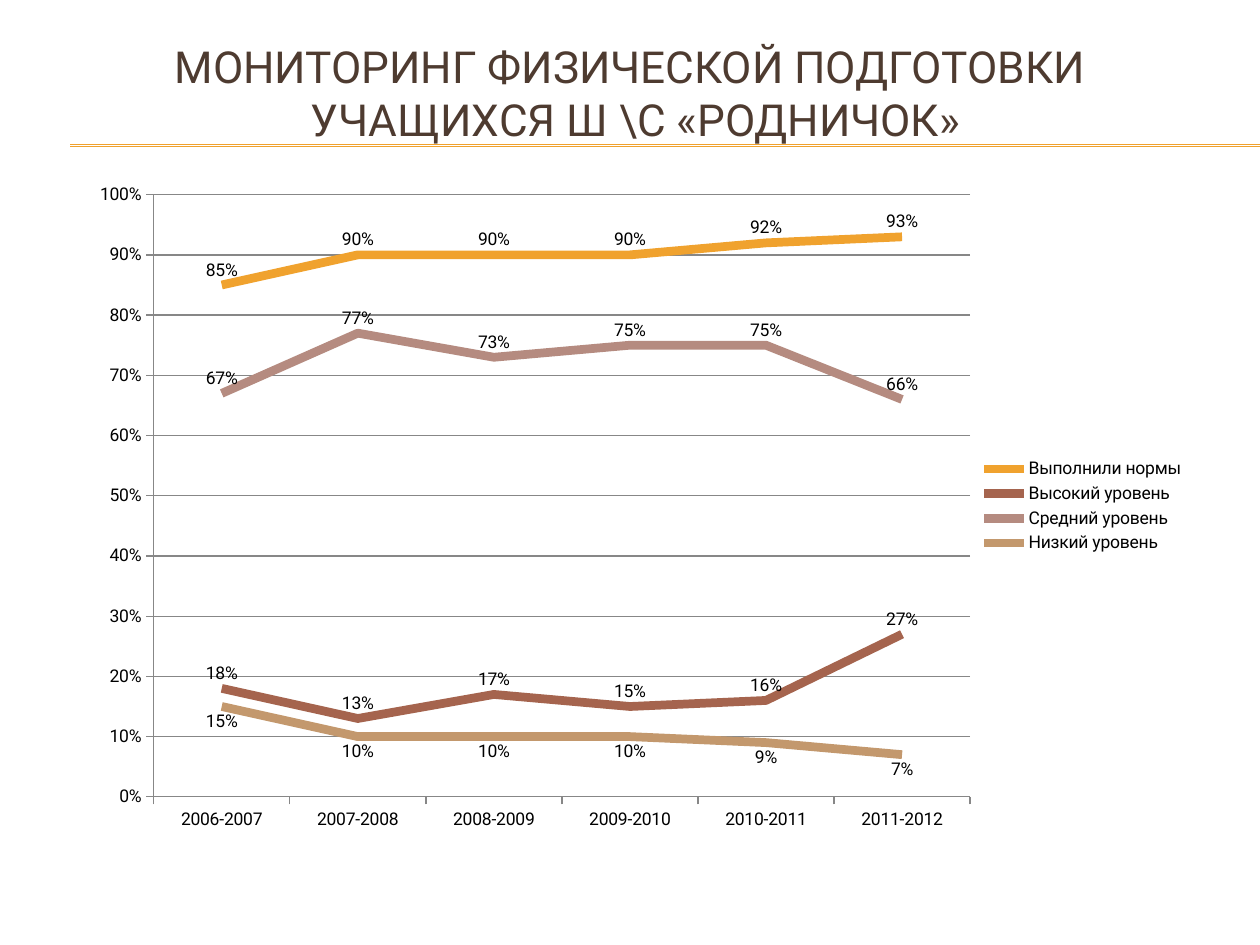
from lxml.etree import SubElement
from pptx import Presentation
from pptx.chart.data import CategoryChartData
from pptx.dml.color import RGBColor
from pptx.enum.chart import XL_CHART_TYPE, XL_LABEL_POSITION, XL_LEGEND_POSITION, XL_MARKER_STYLE, XL_TICK_MARK
from pptx.enum.shapes import MSO_CONNECTOR
from pptx.enum.text import MSO_ANCHOR, PP_ALIGN
from pptx.oxml import parse_xml
from pptx.oxml.ns import nsdecls, qn
from pptx.util import Cm, Pt

FONT = "Roboto"
BROWN = RGBColor(0x4E, 0x3B, 0x30)
ORANGE = RGBColor(0xF0, 0xA2, 0x2E)
RUST = RGBColor(0xA5, 0x64, 0x4E)
ROSE = RGBColor(0xB5, 0x8B, 0x80)
TAN = RGBColor(0xC3, 0x98, 0x6D)
GRAY = RGBColor(0x87, 0x87, 0x87)
BLACK = RGBColor(0, 0, 0)

presentation = Presentation()
presentation.slide_width = Cm(25.4)
presentation.slide_height = Cm(19.05)
slide = presentation.slides.add_slide(presentation.slide_layouts[6])


def add_text(lines, left, top, width, height, size, color):
    shape = slide.shapes.add_textbox(Cm(left), Cm(top), Cm(width), Cm(height))
    frame = shape.text_frame
    frame.word_wrap = True
    frame.vertical_anchor = MSO_ANCHOR.MIDDLE
    for index, line in enumerate(lines):
        paragraph = frame.paragraphs[0] if index == 0 else frame.add_paragraph()
        paragraph.alignment = PP_ALIGN.CENTER
        run = paragraph.add_run()
        run.text = line
        run.font.name = FONT
        run.font.size = Pt(size)
        run.font.color.rgb = color


for rule_top in (2.92, 2.95):
    rule = slide.shapes.add_connector(
        MSO_CONNECTOR.STRAIGHT, Cm(1.42), Cm(rule_top), Cm(25.4), Cm(rule_top)
    )
    rule.line.color.rgb = ORANGE
    rule.line.width = Pt(0.75)
    SubElement(rule.element.spPr, qn("a:effectLst"))

add_text(
    ["МОНИТОРИНГ ФИЗИЧЕСКОЙ ПОДГОТОВКИ", " УЧАЩИХСЯ Ш \\С «РОДНИЧОК»"],
    left=1.27, top=0.66, width=22.86, height=2.41, size=25.2, color=BROWN,
)

ABOVE, BELOW = XL_LABEL_POSITION.ABOVE, XL_LABEL_POSITION.BELOW
levels = [
    ("Выполнили нормы", (0.85, 0.9, 0.9, 0.9, 0.92, 0.93), ORANGE, ABOVE),
    ("Высокий уровень", (0.18, 0.13, 0.17, 0.15, 0.16, 0.27), RUST, ABOVE),
    ("Средний уровень", (0.67, 0.77, 0.73, 0.75, 0.75, 0.66), ROSE, ABOVE),
    ("Низкий уровень", (0.15, 0.1, 0.1, 0.1, 0.09, 0.07), TAN, BELOW),
]
chart_data = CategoryChartData(number_format="0%")
chart_data.categories = [f"{year}-{year + 1}" for year in range(2006, 2012)]
for name, values, color, position in levels:
    chart_data.add_series(name, values)

chart = slide.shapes.add_chart(
    XL_CHART_TYPE.LINE, Cm(1.27), Cm(3.38), Cm(22.86), Cm(13.64), chart_data
).chart
chart.has_title = False
chart.font.name = FONT
chart.font.size = Pt(10)
chart.font.color.rgb = BLACK
chart.has_legend = True
chart.legend.position = XL_LEGEND_POSITION.RIGHT
chart.legend.include_in_layout = False
chart.plots[0].vary_by_categories = False

for series, (name, values, color, position) in zip(chart.plots[0].series, levels):
    series.smooth = False
    series.marker.style = XL_MARKER_STYLE.NONE
    series.format.line.color.rgb = color
    series.format.line.width = Pt(5)
    labels = series.data_labels
    labels.show_value = True
    labels.position = position
    labels.number_format = "0%"
    labels.number_format_is_linked = False

for axis in (chart.category_axis, chart.value_axis):
    axis.major_tick_mark = XL_TICK_MARK.OUTSIDE
    axis.minor_tick_mark = XL_TICK_MARK.NONE
    axis.format.line.color.rgb = GRAY
    axis.format.line.width = Pt(0.75)

value_axis = chart.value_axis
value_axis.minimum_scale = 0
value_axis.maximum_scale = 1
value_axis.major_unit = 0.1
value_axis.tick_labels.number_format = "0%"
value_axis.tick_labels.number_format_is_linked = False
value_axis.has_major_gridlines = True
value_axis.major_gridlines.format.line.color.rgb = GRAY
value_axis.major_gridlines.format.line.width = Pt(0.75)

plot_area = chart.element.find(".//" + qn("c:plotArea")) if hasattr(chart, "element") else chart._chartSpace.find(".//" + qn("c:plotArea"))
for layout in plot_area.findall(qn("c:layout")):
    plot_area.remove(layout)
plot_area.insert(0, parse_xml(
    f'<c:layout {nsdecls("c")}><c:manualLayout><c:layoutTarget val="inner"/>'
    '<c:xMode val="edge"/><c:yMode val="edge"/><c:x val="0.08"/><c:y val="0.04"/>'
    '<c:w val="0.72"/><c:h val="0.89"/></c:manualLayout></c:layout>'
))

presentation.save("out.pptx")
